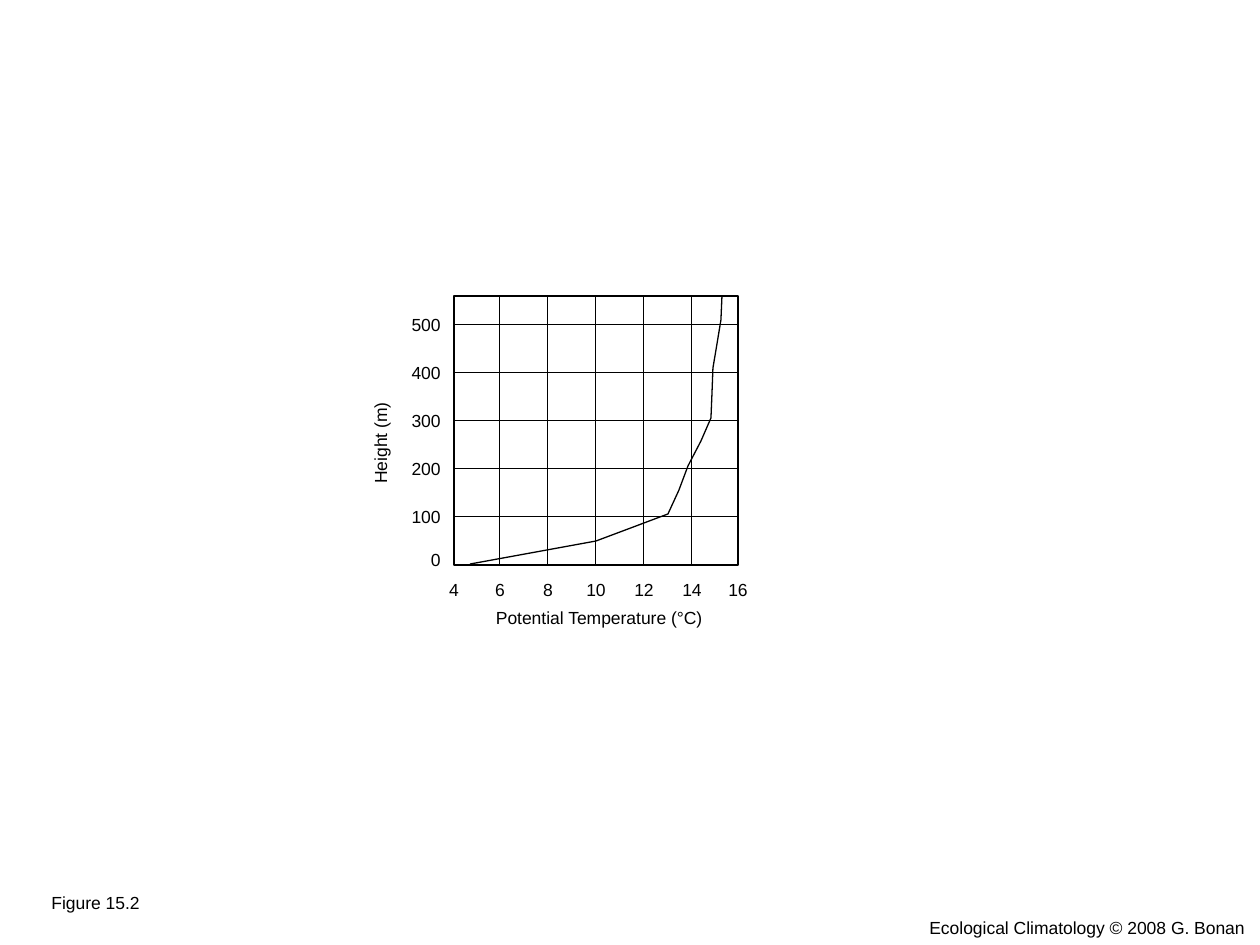
from lxml import etree
from pptx import Presentation
from pptx.dml.color import RGBColor
from pptx.enum.shapes import MSO_CONNECTOR as Connector, MSO_SHAPE as Shape
from pptx.enum.text import MSO_AUTO_SIZE as AutoSize, PP_ALIGN as Align
from pptx.oxml.ns import qn
from pptx.util import Emu, Pt

COLORS = {"ink": "000000", "paper": "FFFFFF"}
FONT = "Arial"
LABEL_HEIGHT = 34
GRID_STEP = 48
HAIRLINE = 0.01
CURVE = [(16, 268), (142, 245), (214, 218), (225, 194), (234, 170), (247, 145),
         (257, 122), (258, 98), (259, 72), (263, 48), (267, 24), (268, 0)]


def px(length):
    """Turn pixels at 126 to the inch into EMU."""
    return Emu(round(length * 914400 / 126))


def color(name):
    """Look up a named colour."""
    return RGBColor.from_string(COLORS[name])


def style_line(line, width):
    """Give a line the ink colour and a width in points."""
    line.color.rgb = color("ink")
    line.width = Pt(width)


def add_text(slide, text, left, top, width, align=Align.LEFT, wrap=False, rotation=0, size=10):
    """Place one line of text in a box."""
    box = slide.shapes.add_textbox(px(left), px(top), px(width), px(LABEL_HEIGHT))
    box.rotation = rotation
    frame = box.text_frame
    frame.word_wrap = wrap
    frame.auto_size = AutoSize.SHAPE_TO_FIT_TEXT
    paragraph = frame.paragraphs[0]
    paragraph.alignment = align
    run = paragraph.add_run()
    run.text = text
    run.font.name = FONT
    run.font.size = Pt(size)
    run.font.color.rgb = color("ink")


def add_grid_line(slide, x1, y1, x2, y2):
    """Draw a hairline between two points."""
    line = slide.shapes.add_connector(Connector.STRAIGHT, px(x1), px(y1), px(x2), px(y2))
    style_line(line.line, HAIRLINE)
    etree.SubElement(line._element.spPr, qn("a:effectLst"))


def add_plot(slide, left, top, width, height):
    """Draw the frame, the grid and the temperature profile."""
    frame = slide.shapes.add_shape(Shape.RECTANGLE, px(left), px(top), px(width), px(height))
    frame.shadow.inherit = False
    frame.fill.background()
    style_line(frame.line, 0.75)
    for index in range(5):
        y = top + 29 + index * GRID_STEP
        add_grid_line(slide, left, y, left + width, y)
    for index in range(5):
        x = left + 46 + index * GRID_STEP
        add_grid_line(slide, x, top + height, x, top)
    points = [(px(left + x), px(top + y)) for x, y in CURVE]
    builder = slide.shapes.build_freeform(*points[0])
    builder.add_line_segments(points[1:], close=False)
    profile = builder.convert_to_shape()
    profile.shadow.inherit = False
    profile.fill.background()
    style_line(profile.line, 0.75)


def add_axis_labels(slide, left, top, width, height):
    """Write the scale values and titles around the plot."""
    heights = [height - 5] + [29 + index * GRID_STEP for index in reversed(range(5))]
    for index, y in enumerate(heights):
        value = str(index * 100)
        label_width = 26 + 10 * len(value)
        label_left = left - 1 - label_width
        add_text(slide, value, label_left, top + y - LABEL_HEIGHT / 2, label_width, Align.RIGHT)
    positions = [0] + [46 + index * GRID_STEP for index in range(5)] + [width]
    for index, x in enumerate(positions):
        value = str(4 + 2 * index)
        label_width = 26 + 10 * len(value)
        add_text(slide, value, left + x - label_width / 2, top + height + 8, label_width, Align.CENTER)
    add_text(slide, "Potential Temperature (°C)", left + 28, top + height + 36, 234, Align.CENTER)
    add_text(slide, "Height (m)", left - 127, top + 130, 107, Align.CENTER, rotation=270)


def add_footer(slide, left, top, width):
    """Write the figure number and the source line."""
    add_text(slide, "Figure 15.2", left + 39, top, 120, wrap=True)
    add_text(slide, "Ecological Climatology © 2008 G. Bonan", left + width - 343, top + 25, 343)


def main():
    """Build and save the slide."""
    presentation = Presentation()
    presentation.slide_width = px(1260)
    presentation.slide_height = px(945)
    slide = presentation.slides.add_slide(presentation.slide_layouts[6])
    slide.background.fill.solid()
    slide.background.fill.fore_color.rgb = color("paper")
    plot_box = (454, 296, 284, 269)
    add_plot(slide, *plot_box)
    add_axis_labels(slide, *plot_box)
    add_footer(slide, 0, 886, 1260)
    presentation.save("out.pptx")


if __name__ == "__main__":
    main()
